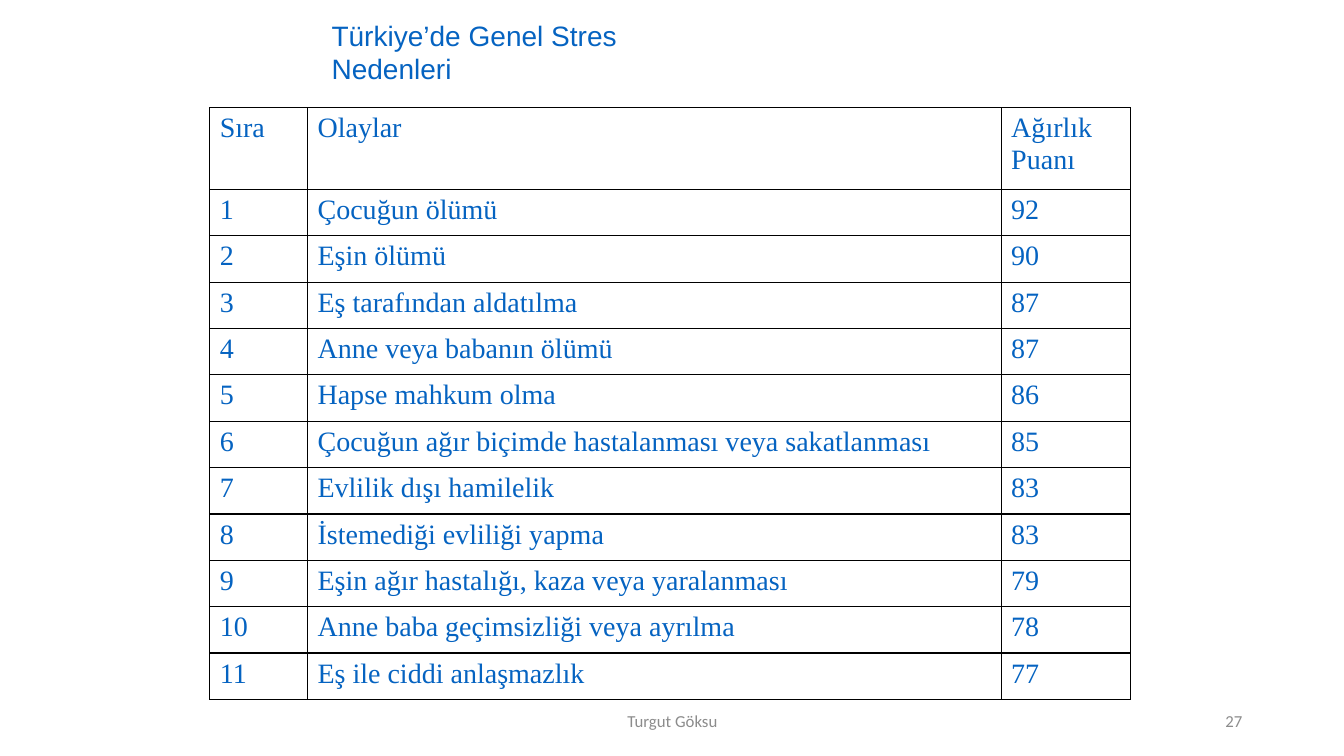
from dataclasses import dataclass

import pptx
import pptx.dml.color
import pptx.enum.text
import pptx.oxml
import pptx.oxml.ns
import pptx.util
from pptx.util import Inches

ALIGN = pptx.enum.text.PP_ALIGN
ANCHOR = pptx.enum.text.MSO_ANCHOR


@dataclass(frozen=True)
class Theme:
    blue: str = "0563C1"
    grey: str = "8C8C8C"
    border: str = "000000"
    title_font: str = "Arial"
    table_font: str = "Times New Roman"
    footer_font: str = "Calibri"
    body_size: int = 20
    footer_size: int = 12
    border_width: int = 1


THEME = Theme()

HEADER = ("Sıra", "Olaylar", "Ağırlık Puanı")
EVENTS = (
    ("Çocuğun ölümü", 92),
    ("Eşin ölümü", 90),
    ("Eş tarafından aldatılma", 87),
    ("Anne veya babanın ölümü", 87),
    ("Hapse mahkum olma", 86),
    ("Çocuğun ağır biçimde hastalanması veya sakatlanması", 85),
    ("Evlilik dışı hamilelik", 83),
    ("İstemediği evliliği yapma", 83),
    ("Eşin ağır hastalığı, kaza veya yaralanması", 79),
    ("Anne baba geçimsizliği veya ayrılma", 78),
    ("Eş ile ciddi anlaşmazlık", 77),
)
COLUMN_WIDTHS = (0.97, 6.88, 1.28)
HEADER_HEIGHT = 0.81
ROW_HEIGHT = 0.46


def write(tf, text, font, size, color, align=ALIGN.LEFT):
    tf.text = text
    p = tf.paragraphs[0]
    p.alignment = align
    r = p.runs[0]
    r.font.name = font
    r.font.size = pptx.util.Pt(size)
    r.font.color.rgb = pptx.dml.color.RGBColor.from_string(color)


def add_text(slide, box, text, font, size, color, align=ALIGN.LEFT):
    sp = slide.shapes.add_textbox(*map(Inches, box))
    tf = sp.text_frame
    tf.word_wrap = True
    tf.vertical_anchor = ANCHOR.MIDDLE
    write(tf, text, font, size, color, align)


def add_borders(cell):
    tc_pr = cell._tc.get_or_add_tcPr()
    width = pptx.util.Pt(THEME.border_width)
    for i, side in enumerate(("lnL", "lnR", "lnT", "lnB")):
        ln = pptx.oxml.parse_xml(
            f'<a:{side} {pptx.oxml.ns.nsdecls("a")} w="{width}"><a:solidFill>'
            f'<a:srgbClr val="{THEME.border}"/></a:solidFill></a:{side}>'
        )
        tc_pr.insert(i, ln)


def add_event_table(slide, left, top):
    rows = [HEADER] + [(i, *event) for i, event in enumerate(EVENTS, 1)]
    heights = [HEADER_HEIGHT] + [ROW_HEIGHT] * len(EVENTS)
    box = (left, top, sum(COLUMN_WIDTHS), sum(heights))
    table = slide.shapes.add_table(
        len(rows), len(HEADER), *map(Inches, box)
    ).table
    table.first_row = table.horz_banding = False
    for column, width in zip(table.columns, COLUMN_WIDTHS):
        column.width = Inches(width)
    for row, height, values in zip(table.rows, heights, rows):
        row.height = Inches(height)
        for cell, value in zip(row.cells, values):
            cell.fill.background()
            add_borders(cell)
            write(cell.text_frame, str(value), THEME.table_font,
                  THEME.body_size, THEME.blue)


def main():
    prs = pptx.Presentation()
    prs.slide_width, prs.slide_height = Inches(13.33), Inches(7.5)
    slide = prs.slides.add_slide(prs.slide_layouts[6])
    footer = (THEME.footer_font, THEME.footer_size, THEME.grey)
    add_text(slide, (4.42, 6.95, 4.5, 0.4), "Turgut Göksu", *footer, ALIGN.CENTER)
    add_text(slide, (9.42, 6.95, 3, 0.4), "27", *footer, ALIGN.RIGHT)
    add_event_table(slide, 2.08, 1.07)
    add_text(slide, (3.19, 0.3, 4.2, 0.43), "Türkiye’de Genel Stres Nedenleri",
             THEME.title_font, THEME.body_size, THEME.blue)
    prs.save("out.pptx")


if __name__ == "__main__":
    main()
